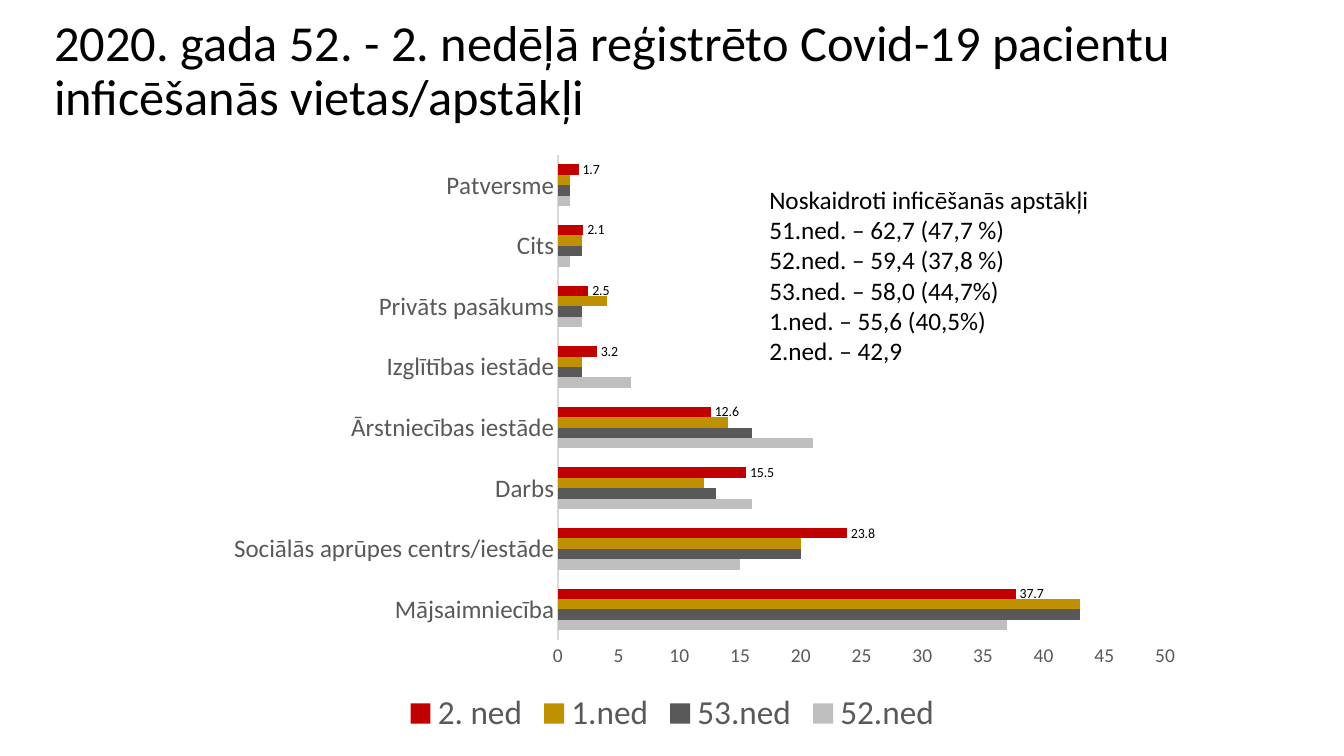
from lxml import etree
from pptx import Presentation
from pptx.chart.data import CategoryChartData
from pptx.dml.color import RGBColor
from pptx.enum.chart import XL_CHART_TYPE as ChartType
from pptx.enum.chart import XL_LABEL_POSITION as LabelPosition
from pptx.enum.chart import XL_LEGEND_POSITION as LegendPosition
from pptx.enum.chart import XL_TICK_MARK as TickMark
from pptx.enum.text import MSO_ANCHOR as Anchor
from pptx.enum.text import MSO_AUTO_SIZE as AutoSize
from pptx.oxml.ns import qn
from pptx.util import Inches, Pt

BLACK = RGBColor(0x00, 0x00, 0x00)
DARK_GRAY = RGBColor(0x59, 0x59, 0x59)
SILVER = RGBColor(0xBF, 0xBF, 0xBF)
LIGHT_GRAY = RGBColor(0xD9, 0xD9, 0xD9)
GOLD = RGBColor(0xBF, 0x90, 0x00)
RED = RGBColor(0xC0, 0x00, 0x00)

FONT = "Calibri"
WIDTH, HEIGHT = 13.33, 7.5
TITLE = "2020. gada 52. - 2. nedēļā reģistrēto Covid-19 pacientu inficēšanās vietas/apstākļi"
SUMMARY = (
    "Noskaidroti inficēšanās apstākļi",
    "51.ned. – 62,7 (47,7 %)",
    "52.ned. – 59,4 (37,8 %)",
    "53.ned. – 58,0 (44,7%)",
    "1.ned. – 55,6 (40,5%)",
    "2.ned. – 42,9",
)
PLACES = (
    "Mājsaimniecība",
    "Sociālās aprūpes centrs/iestāde",
    "Darbs",
    "Ārstniecības iestāde",
    "Izglītības iestāde",
    "Privāts pasākums",
    "Cits",
    "Patversme",
)
WEEKS = (
    ("52.ned", SILVER, (37, 15, 16, 21, 6, 2, 1, 1)),
    ("53.ned", DARK_GRAY, (43, 20, 13, 16, 2, 2, 2, 1)),
    ("1.ned", GOLD, (43, 20, 12, 14, 2, 4, 2, 1)),
    ("2. ned", RED, (37.7, 23.8, 15.5, 12.6, 3.2, 2.5, 2.1, 1.7)),
)
PLOT_SHARES = {"x": 0.4, "y": 0.025, "w": 0.616, "h": 0.807}


def area(left, top, width, height):
    """Turn shares of the slide into lengths."""
    return (
        Inches(WIDTH * left),
        Inches(HEIGHT * top),
        Inches(WIDTH * width),
        Inches(HEIGHT * height),
    )


def style(font, size, color):
    """Set the face, size and colour of a font."""
    font.name = FONT
    font.size = Pt(size)
    font.color.rgb = color


def add_text(page, place, lines, size, anchor=Anchor.TOP, wrap=True, spacing=1.0):
    """Add a text box with one paragraph per line."""
    box = page.shapes.add_textbox(*area(*place))
    frame = box.text_frame
    frame.word_wrap = wrap
    frame.auto_size = AutoSize.NONE if wrap else AutoSize.SHAPE_TO_FIT_TEXT
    frame.vertical_anchor = anchor
    frame.text = "\n".join(lines)
    for para in frame.paragraphs:
        para.line_spacing = spacing
        style(para.font, size, BLACK)


def place_plot(chart, shares):
    """Fix the inner plot area at shares of the chart."""
    plot_area = chart.element.find(qn("c:chart")).find(qn("c:plotArea"))
    for layout in plot_area.findall(qn("c:layout")):
        plot_area.remove(layout)
    layout = etree.Element(qn("c:layout"))
    plot_area.insert(0, layout)
    manual = etree.SubElement(layout, qn("c:manualLayout"))
    settings = {"layoutTarget": "inner", "xMode": "edge", "yMode": "edge", **shares}
    for name, value in settings.items():
        etree.SubElement(manual, qn(f"c:{name}")).set("val", str(value))


def style_axis(axis, size):
    """Remove ticks and gridlines from an axis and set its font."""
    axis.major_tick_mark = TickMark.NONE
    axis.minor_tick_mark = TickMark.NONE
    axis.has_major_gridlines = False
    style(axis.tick_labels.font, size, DARK_GRAY)


def style_axes(chart):
    """Style the place axis and the value axis."""
    style_axis(chart.category_axis, 18)
    line = chart.category_axis.format.line
    line.color.rgb = LIGHT_GRAY
    line.width = Pt(0.75)
    values = chart.value_axis
    style_axis(values, 14)
    values.format.line.fill.background()
    values.minimum_scale, values.maximum_scale, values.major_unit = 0, 50, 5
    values.tick_labels.number_format = "0"
    values.tick_labels.number_format_is_linked = False


def label_series(series):
    """Show the values of a series at the bar ends."""
    labels = series.data_labels
    labels.show_value = True
    labels.number_format = "0.0"
    labels.number_format_is_linked = False
    labels.position = LabelPosition.OUTSIDE_END
    style(labels.font, 10, BLACK)


def add_week_chart(page, place):
    """Add the clustered bar chart of infection places by week."""
    data = CategoryChartData()
    data.categories = PLACES
    for name, _, values in WEEKS:
        data.add_series(name, values)
    chart = page.shapes.add_chart(ChartType.BAR_CLUSTERED, *area(*place), data).chart
    chart.has_title = False
    style(chart.font, 10, BLACK)
    plot = chart.plots[0]
    plot.gap_width = 182
    plot.overlap = 0
    plot.vary_by_categories = False
    for series, (_, color, _) in zip(plot.series, WEEKS):
        series.format.fill.solid()
        series.format.fill.fore_color.rgb = color
    label_series(plot.series[-1])
    style_axes(chart)
    chart.has_legend = True
    chart.legend.position = LegendPosition.BOTTOM
    chart.legend.include_in_layout = False
    style(chart.legend.font, 24, DARK_GRAY)
    place_plot(chart, PLOT_SHARES)


def main():
    """Build and save the slide."""
    deck = Presentation()
    deck.slide_width, deck.slide_height = Inches(WIDTH), Inches(HEIGHT)
    page = deck.slides.add_slide(deck.slide_layouts[6])
    add_text(page, (0.033, 0.012, 0.956, 0.167), [TITLE], 36, Anchor.MIDDLE, spacing=0.9)
    add_week_chart(page, (0.1335, 0.185, 0.741, 0.795))
    add_text(page, (0.565, 0.237, 0.255, 0.256), SUMMARY, 18, wrap=False)
    deck.save("out.pptx")


if __name__ == "__main__":
    main()
